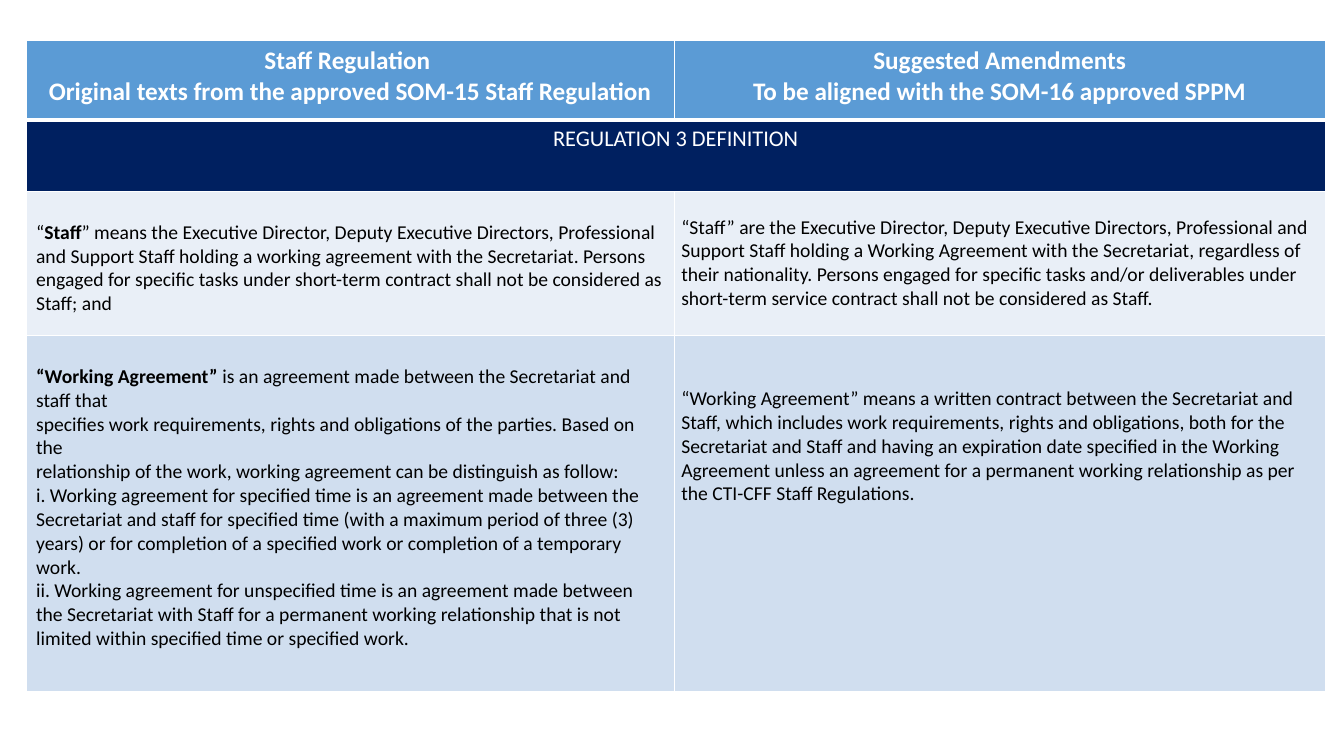
"""Build a slide comparing staff regulation texts with suggested amendments."""
from lxml import etree
from pptx import Presentation
from pptx.dml.color import RGBColor
from pptx.enum.text import PP_ALIGN
from pptx.oxml.ns import qn
from pptx.util import Cm, Pt

CENTER = PP_ALIGN.CENTER
LEFT = PP_ALIGN.LEFT
WHITE = RGBColor(0xFF, 0xFF, 0xFF)
BLACK = RGBColor(0, 0, 0)
HEADER_BLUE = RGBColor(0x5B, 0x9B, 0xD5)
NAVY = RGBColor(0, 0x20, 0x60)
PALE_BLUE = RGBColor(0xE9, 0xEF, 0xF7)
LIGHT_BLUE = RGBColor(0xD0, 0xDE, 0xEF)

COLUMN_WIDTHS = (16.33, 16.41)
ROW_HEIGHTS = (2.01, 1.8, 3.63, 8.97)
WIDE_INSET = (0.25, 0.13)
NARROW_INSET = (0.18, 0)

HEADINGS = (
    ("Staff Regulation ", "Original texts from the approved SOM-15 Staff Regulation"),
    ("Suggested Amendments", "To be aligned with the SOM-16 approved SPPM"),
)
STAFF_REGULATION = [
    [("“", False), ("Staff", True),
     ("” means the Executive Director, Deputy Executive Directors, Professional and "
      "Support Staff holding a working agreement with the Secretariat. Persons engaged "
      "for specific tasks under short-term contract shall not be considered as Staff; "
      "and", False)],
]
STAFF_AMENDMENT = [
    [("“Staff” are the Executive Director, Deputy Executive Directors, Professional and "
      "Support Staff holding a Working Agreement with the Secretariat, regardless of "
      "their nationality. Persons engaged for specific tasks and/or deliverables under "
      "short-term service contract shall not be considered as Staff.", False)],
]
AGREEMENT_REGULATION = [
    [("“Working Agreement” ", True),
     ("is an agreement made between the Secretariat and staff that", False)],
    [("specifies work requirements, rights and obligations of the parties. Based on the",
      False)],
    [("relationship of the work, working agreement can be distinguish as follow:", False)],
    [("i. Working agreement for specified time is an agreement made between the "
      "Secretariat and staff for specified time (with a maximum period of three (3) "
      "years) or for completion of a specified work or completion of a temporary work.",
      False)],
    [("ii. Working agreement for unspecified time is an agreement made between the "
      "Secretariat with Staff for a permanent working relationship that is not limited "
      "within specified time or specified work.", False)],
]
AGREEMENT_AMENDMENT = [
    [("“Working Agreement” means a written contract between the Secretariat and Staff, "
      "which includes work requirements, rights and obligations, both for the "
      "Secretariat and Staff and having an expiration date specified in the Working "
      "Agreement unless an agreement for a permanent working relationship as per the "
      "CTI-CFF Staff Regulations.", False)],
]


class RegulationSlide:
    """Hold the text style and the slide, and add its elements."""

    font = "Calibri"

    def __init__(self, deck):
        """Add a blank slide to the deck."""
        self.slide = deck.slides.add_slide(deck.slide_layouts[6])

    def add_grid(self, left, top, widths, heights):
        """Add a table with the given column widths and row heights."""
        grid = self.slide.shapes.add_table(
            len(heights), len(widths), Cm(left), Cm(top),
            Cm(sum(widths)), Cm(sum(heights))).table
        for column, width in zip(grid.columns, widths):
            column.width = Cm(width)
        for row, height in zip(grid.rows, heights):
            row.height = Cm(height)
        return grid

    def paint_cell(self, cell, fill, top_line=1, bottom_line=1):
        """Fill a cell and draw its white borders."""
        cell.fill.solid()
        cell.fill.fore_color.rgb = fill
        properties = cell._tc.get_or_add_tcPr()
        borders = (("a:lnL", 1), ("a:lnR", 1), ("a:lnT", top_line), ("a:lnB", bottom_line))
        for position, (tag, points) in enumerate(borders):
            line = etree.Element(qn(tag), w=str(Pt(points)))
            paint = etree.SubElement(line, qn("a:solidFill"))
            etree.SubElement(paint, qn("a:srgbClr"), val=str(WHITE))
            properties.insert(position, line)

    def write_cell(self, cell, paragraphs, size, color, align=LEFT,
                   inset=WIDE_INSET, lead=0):
        """Write paragraphs of (text, bold) runs below an optional lead gap."""
        side, edge = inset
        cell.margin_left = cell.margin_right = Cm(side)
        cell.margin_top = Cm(edge + lead)
        cell.margin_bottom = Cm(edge)
        frame = cell.text_frame
        for index, runs in enumerate(paragraphs):
            paragraph = frame.add_paragraph() if index else frame.paragraphs[0]
            paragraph.alignment = align
            for text, bold in runs:
                run = paragraph.add_run()
                run.text = text
                run.font.name = self.font
                run.font.size = Pt(size)
                run.font.bold = bold
                run.font.color.rgb = color


def main():
    """Create and save the deck."""
    deck = Presentation()
    deck.slide_width, deck.slide_height = Cm(33.87), Cm(19.05)
    page = RegulationSlide(deck)
    grid = page.add_grid(0.66, 1.02, COLUMN_WIDTHS, ROW_HEIGHTS)

    for column, heading in enumerate(HEADINGS):
        header = grid.cell(0, column)
        page.paint_cell(header, HEADER_BLUE, bottom_line=3)
        page.write_cell(header, [[(line, True)] for line in heading], 18, WHITE, CENTER)
        page.paint_cell(grid.cell(1, column), NAVY, top_line=3)

    section = grid.cell(1, 0)
    section.merge(grid.cell(1, 1))
    page.write_cell(section, [[("REGULATION 3 DEFINITION", False)]], 16, WHITE, CENTER)

    definitions = (
        (PALE_BLUE, (STAFF_REGULATION, WIDE_INSET, 0.6),
         (STAFF_AMENDMENT, NARROW_INSET, 0.6)),
        (LIGHT_BLUE, (AGREEMENT_REGULATION, WIDE_INSET, 0.6),
         (AGREEMENT_AMENDMENT, NARROW_INSET, 1.29)),
    )
    for row, (fill, *entries) in enumerate(definitions, start=2):
        for column, (paragraphs, inset, lead) in enumerate(entries):
            definition = grid.cell(row, column)
            page.paint_cell(definition, fill)
            page.write_cell(definition, paragraphs, 14, BLACK, inset=inset, lead=lead)

    deck.save("out.pptx")


if __name__ == "__main__":
    main()
